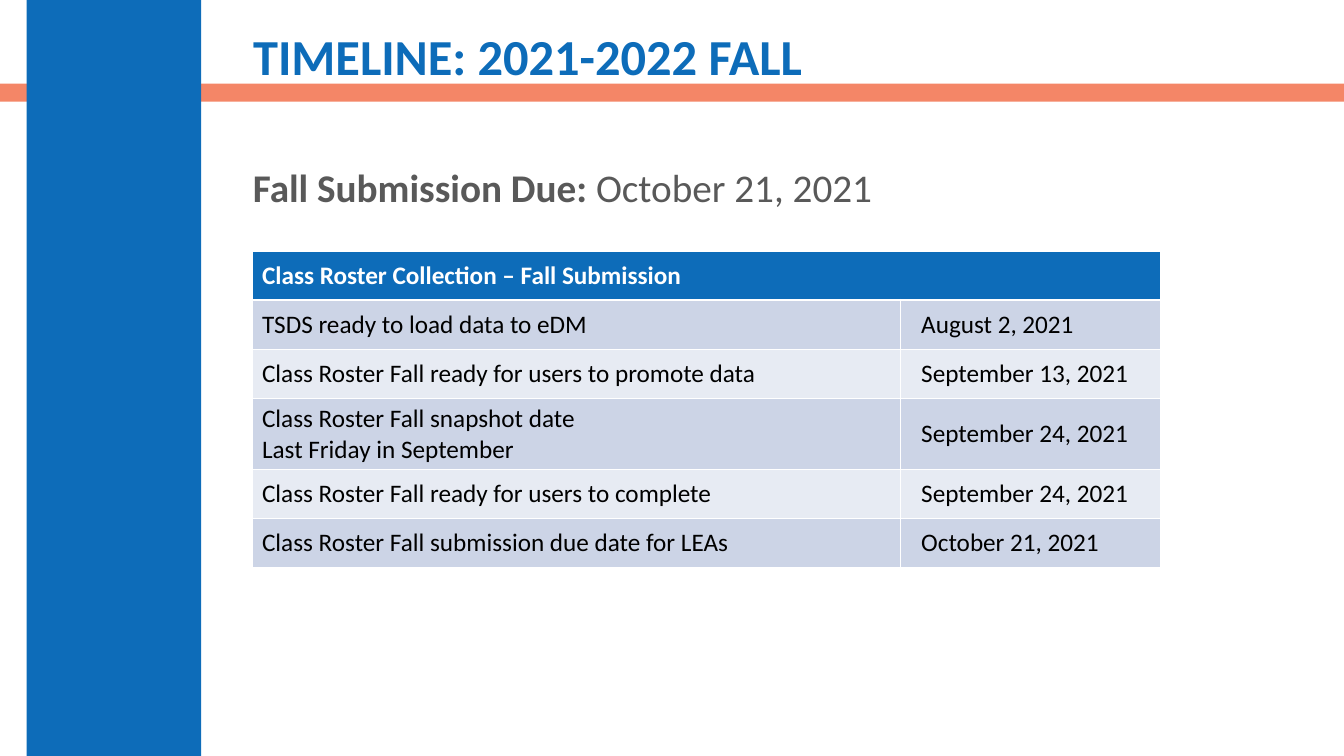
from dataclasses import dataclass

from pptx import Presentation
from pptx.dml.color import RGBColor as Rgb
from pptx.enum.shapes import MSO_SHAPE as Shape
from pptx.enum.text import MSO_ANCHOR as Anchor, PP_ALIGN as Align
from pptx.oxml import parse_xml
from pptx.oxml.ns import nsdecls, qn
from pptx.util import Inches, Pt


@dataclass(frozen=True)
class Theme:
    font: str = "Calibri"
    blue: str = "0D6CB9"
    coral: str = "F16038"
    grey: str = "595959"
    black: str = "000000"
    white: str = "FFFFFF"
    bands: tuple = ("CCD4E6", "E7EBF3")
    title: int = 36
    lead: int = 28
    cell: int = 18
    thin: float = 0.72
    thick: float = 2.16


class Deck:
    def __init__(self, theme):
        self.theme = theme
        self.file = Presentation()
        self.file.slide_width = Inches(13.33)
        self.file.slide_height = Inches(7.5)
        self.slide = self.file.slides.add_slide(self.file.slide_layouts[5])
        self.shapes = self.slide.shapes

    def across(self, share):
        """Turn a percentage of the slide's width into a length."""
        return round(self.file.slide_width * share / 100)

    def down(self, share):
        """Turn a percentage of the slide's height into a length."""
        return round(self.file.slide_height * share / 100)

    def box(self, left, top, width, height):
        return self.across(left), self.down(top), self.across(width), self.down(height)

    def style(self, par, size, color, bold=False):
        par.alignment = Align.LEFT
        for run in par.runs:
            font = run.font
            font.name, font.size, font.bold = self.theme.font, Pt(size), bold
            font.color.rgb = Rgb.from_string(color)

    def band(self, area, color, alpha=100):
        """Draw a plain bar behind the title, with its opacity in percent."""
        bar = self.shapes.add_shape(Shape.RECTANGLE, *self.box(*area))
        bar.shadow.inherit = False
        bar.line.fill.background()
        bar.fill.solid()
        bar.fill.fore_color.rgb = Rgb.from_string(color)
        if alpha < 100:
            tint = bar.fill._xPr.find(".//" + qn("a:srgbClr"))
            tint.append(parse_xml(f'<a:alpha {nsdecls("a")} val="{alpha * 1000}"/>'))
        self.shapes.title.element.addprevious(bar.element)

    def title(self, area, text):
        head = self.shapes.title
        head.left, head.top, head.width, head.height = self.box(*area)
        frame = head.text_frame
        frame.text = text
        frame.vertical_anchor = Anchor.MIDDLE
        par = frame.paragraphs[0]
        par.line_spacing = 0.9
        self.style(par, self.theme.title, self.theme.blue, True)

    def lead(self, area, label, value):
        frame = self.shapes.add_textbox(*self.box(*area)).text_frame
        frame.word_wrap = True
        par = frame.paragraphs[0]
        par.line_spacing = 0.9
        for part in (label, value):
            par.add_run().text = part
        self.style(par, self.theme.lead, self.theme.grey)
        par.runs[0].font.bold = True

    def edge(self, cell, side, width):
        cell._tc.get_or_add_tcPr().append(parse_xml(
            f'<a:ln{side} {nsdecls("a")} w="{Pt(width)}"><a:solidFill>'
            f'<a:srgbClr val="{self.theme.white}"/></a:solidFill></a:ln{side}>'))

    def cell(self, cell, text, row):
        theme, head = self.theme, row == 0
        top = theme.thick if row == 1 else theme.thin
        base = theme.thick if head else theme.thin
        for side, width in zip("LRTB", (theme.thin, theme.thin, top, base)):
            self.edge(cell, side, width)
        cell.fill.solid()
        fill = theme.blue if head else theme.bands[(row - 1) % 2]
        cell.fill.fore_color.rgb = Rgb.from_string(fill)
        cell.vertical_anchor = Anchor.MIDDLE
        cell.text_frame.text = text
        for par in cell.text_frame.paragraphs:
            self.style(par, theme.cell, theme.white if head else theme.black, head)

    def table(self, left, top, widths, height, head, rows):
        """Draw a table of two columns below one merged heading row."""
        lines = [(head, ""), *rows]
        area = self.box(left, top, sum(widths), height * len(lines))
        grid = self.shapes.add_table(len(lines), len(widths), *area).table
        for col, width in zip(grid.columns, widths):
            col.width = self.across(width)
        for i, line in enumerate(lines):
            grid.rows[i].height = self.down(height)
            for j, text in enumerate(line):
                self.cell(grid.cell(i, j), text, i)
            grid.cell(i, 1).margin_left = Inches(0.21)
        grid.cell(0, 0).merge(grid.cell(0, 1))


def main():
    theme = Theme()
    deck = Deck(theme)
    deck.band((0, 11.05, 100, 2.4), theme.coral, 76)
    deck.band((1.98, 0, 12.98, 100), theme.blue)
    deck.title((18.08, 2.4, 79, 10.93), "TIMELINE: 2021-2022 FALL")
    deck.lead((18.08, 21.6, 73.75, 63.5), "Fall Submission Due: ", "October 21, 2021")
    deck.table(18.75, 33.2, (48.22, 19.4), 6.5,
               "Class Roster Collection – Fall Submission", [
                   ("TSDS ready to load data to eDM", "August 2, 2021"),
                   ("Class Roster Fall ready for users to promote data",
                    "September 13, 2021"),
                   ("Class Roster Fall snapshot date\nLast Friday in September",
                    "September 24, 2021"),
                   ("Class Roster Fall ready for users to complete",
                    "September 24, 2021"),
                   ("Class Roster Fall submission due date for LEAs",
                    "October 21, 2021"),
               ])
    deck.file.save("out.pptx")


if __name__ == "__main__":
    main()
